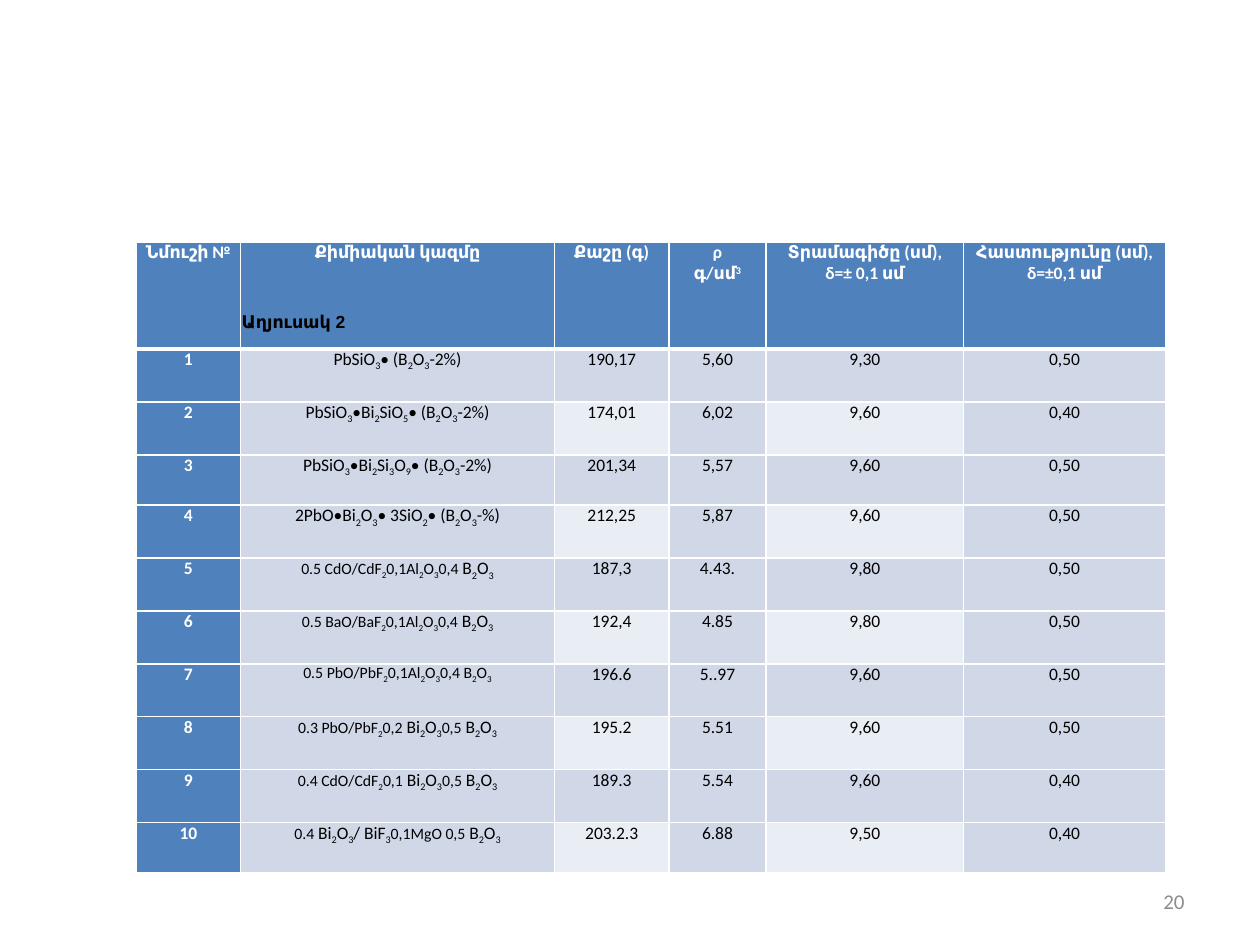
"""Build the slide with the table of glass samples and their measured properties."""
import lxml.etree
import pptx
import pptx.dml.color
import pptx.enum.text
import pptx.oxml.ns
import pptx.util

Inches, Pt = pptx.util.Inches, pptx.util.Pt
ALIGN, ANCHOR = pptx.enum.text.PP_ALIGN, pptx.enum.text.MSO_ANCHOR

THEME = {
    "font": "Calibri", "caption_font": "Arial",
    "text": Pt(10), "small": Pt(9), "number": Pt(12),
    "white": "FFFFFF", "black": "000000", "grey": "8C8C8C",
    "head": "4F81BD", "band": "D0D8E8", "light": "E9EDF4",
    "line": Pt(1), "head_line": Pt(3),
}
MARKS = {"_": "-25000", "^": "30000"}  
CAPTION, PAGE_NUMBER = "Աղյուսակ 2", "20"
HEADER = ("Նմուշի №", "Քիմիական կազմը", "Քաշը (գ)", "ρ\nգ/սմ^3",
          "Տրամագիծը (սմ), δ=± 0,1 սմ", "Հաստությունը (սմ), δ=±0,1 սմ")
SAMPLES = [
    ("PbSiO_3• (B_2O_3-2%)", "190,17", "5,60", "9,30", "0,50"),
    ("PbSiO_3•Bi_2SiO_5• (B_2O_3-2%)", "174,01", "6,02", "9,60", "0,40"),
    ("PbSiO_3•Bi_2Si_3O_9• (B_2O_3-2%)", "201,34", "5,57", "9,60", "0,50"),
    ("2PbO•Bi_2O_3• 3SiO_2• (B_2O_3-%)", "212,25", "5,87", "9,60", "0,50"),
    ("~0.5 CdO/CdF_20,1Al_2O_30,4~ B_2O_3", "187,3", "4.43.", "9,80", "0,50"),
    ("~0.5 BaO/BaF_20,1Al_2O_30,4~ B_2O_3", "192,4", "4.85", "9,80", "0,50"),
    ("~0.5 PbO/PbF_20,1Al_2O_30,4 B_2O_3~", "196.6", "5..97", "9,60", "0,50"),
    ("~0.3 PbO/PbF_20,2~ Bi_2O_3~0,5~ B_2O_3", "195.2", "5.51", "9,60", "0,50"),
    ("~0.4 CdO/CdF_20,1~ Bi_2O_3~0,5~ B_2O_3", "189.3", "5.54", "9,60", "0,40"),
    ("~0.4~ Bi_2O_3/ BiF_3~0,1MgO 0,5~ B_2O_3", "203.2.3", "6.88", "9,50", "0,40"),
]
WIDTHS = (0.83, 2.49, 0.91, 0.77, 1.57, 1.6)
HEADER_HEIGHT, ROW_HEIGHT, SHORT_HEIGHT = 0.85, 0.42, 0.4
SHORT_ROWS = (3, 10)
LIGHT_COLUMNS = (2, 4)


def apply(target, values):
    """Set every named attribute of the target."""
    for name, value in values.items():
        setattr(target, name, value)


def rgb(name):
    """Return a theme colour."""
    return pptx.dml.color.RGBColor.from_string(THEME[name])


def add_span(para, text, color, style, baseline=None):
    """Add one formatted run, raised or lowered when a baseline is given."""
    span = para.add_run()
    span.text = text
    apply(span.font, style)
    span.font.color.rgb = rgb(color)
    if baseline:
        span._r.get_or_add_rPr().set("baseline", baseline)


def add_marked(para, text, color, style):
    """Write text where _ lowers and ^ raises a digit and ~ toggles small type."""
    for index, part in enumerate(text.split("~")):
        sized = dict(style, size=THEME["small"] if index % 2 else THEME["text"])
        plain, baseline = "", None
        for letter in part:
            if letter in MARKS:
                if plain:
                    add_span(para, plain, color, sized)
                plain, baseline = "", MARKS[letter]
            elif baseline:
                add_span(para, letter, color, sized, baseline)
                baseline = None
            else:
                plain += letter
        if plain:
            add_span(para, plain, color, sized)


def add_borders(cell, widths):
    """Draw white lines on the left, right, top and bottom of a cell."""
    properties = cell._tc.get_or_add_tcPr()
    qn = pptx.oxml.ns.qn
    for side, width in zip("LRTB", widths):
        line = lxml.etree.SubElement(properties, qn(f"a:ln{side}"), w=str(width))
        fill = lxml.etree.SubElement(line, qn("a:solidFill"))
        lxml.etree.SubElement(fill, qn("a:srgbClr"), val=THEME["white"])


def fill_cell(cell, text, row, column):
    """Format one table cell by its place in the grid."""
    thin, thick = THEME["line"], THEME["head_line"]
    add_borders(cell, (thin, thin, thick if row == 1 else thin, thick if row == 0 else thin))
    heading = row == 0 or column == 0
    light = row % 2 == 0 and column in LIGHT_COLUMNS
    cell.fill.solid()
    cell.fill.fore_color.rgb = rgb("head" if heading else "light" if light else "band")
    apply(cell, {"margin_left": Inches(0.07), "margin_right": Inches(0.07),
                 "margin_top": 0, "margin_bottom": 0, "vertical_anchor": ANCHOR.TOP})
    style = {"name": THEME["font"], "bold": heading}
    for index, line in enumerate(text.split("\n")):
        para = cell.text_frame.add_paragraph() if index else cell.text_frame.paragraphs[0]
        para.alignment = ALIGN.CENTER
        add_marked(para, line, "white" if heading else "black", style)


def add_table(page):
    """Add the sample table."""
    rows = [HEADER] + [(str(n), *sample) for n, sample in enumerate(SAMPLES, 1)]
    heights = [HEADER_HEIGHT] + [SHORT_HEIGHT if n in SHORT_ROWS else ROW_HEIGHT
                                 for n in range(1, len(rows))]
    table = page.shapes.add_table(len(rows), len(WIDTHS), Inches(1.08), Inches(1.92),
                                  Inches(sum(WIDTHS)), Inches(sum(heights))).table
    for column, width in zip(table.columns, WIDTHS):
        column.width = Inches(width)
    for r, (row, height) in enumerate(zip(rows, heights)):
        table.rows[r].height = Inches(height)
        for c, text in enumerate(row):
            fill_cell(table.cell(r, c), text, r, c)


def add_label(page, text, place, anchor, align, color, style):
    """Add a text box holding one line."""
    box = page.shapes.add_textbox(*map(Inches, place))
    apply(box.text_frame, {"word_wrap": True, "vertical_anchor": anchor})
    para = box.text_frame.paragraphs[0]
    para.alignment = align
    add_span(para, text, color, style)


def main():
    """Assemble and save the deck."""
    deck = pptx.Presentation()
    apply(deck, {"slide_width": Inches(10), "slide_height": Inches(7.5)})
    page = deck.slides.add_slide(deck.slide_layouts[6])
    add_label(page, PAGE_NUMBER, (7.17, 6.95, 2.33, 0.4), ANCHOR.MIDDLE, ALIGN.RIGHT,
              "grey", {"name": THEME["font"], "size": THEME["number"]})
    add_table(page)
    add_label(page, CAPTION, (1.82, 2.42, 6.35, 0.57), ANCHOR.TOP, ALIGN.LEFT, "black",
              {"name": THEME["caption_font"], "size": THEME["text"], "bold": True})
    deck.save("out.pptx")


if __name__ == "__main__":
    main()
